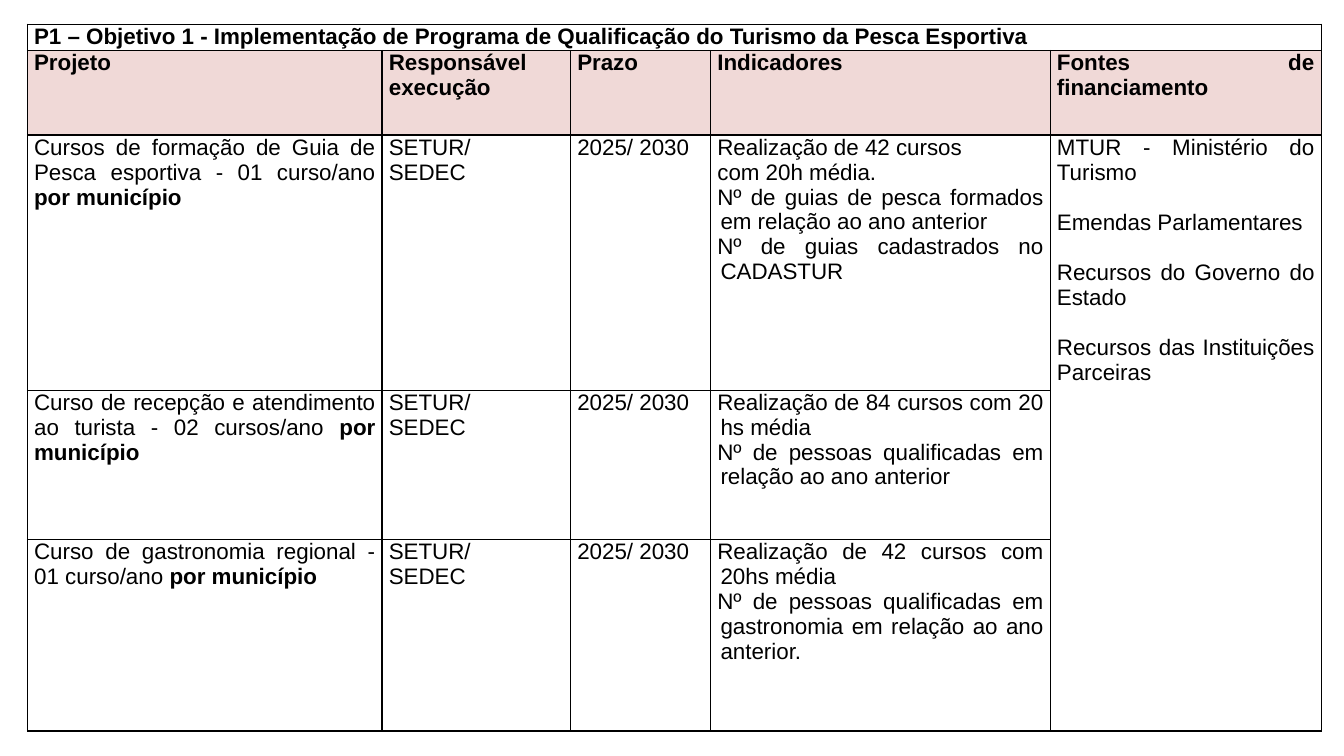
from lxml.etree import SubElement
from pptx import Presentation
from pptx.dml.color import RGBColor
from pptx.enum.text import PP_ALIGN
from pptx.oxml.ns import qn
from pptx.util import Cm, Pt

BLACK = "000000"
HEADER_FILL = "F0D9D7"
COLUMN_SHARES = (3.52, 1.87, 1.39, 3.37, 2.69)
ROW_SHARES = (0.26, 0.84, 2.53, 1.48, 1.9)
INDICATORS_COLUMN = 3
FUNDING_COLUMN = 4

OBJECTIVE = "P1 – Objetivo 1 - Implementação de Programa de Qualificação do Turismo da Pesca Esportiva"
HEADINGS = ("Projeto", "Responsável execução", "Prazo", "Indicadores", "Fontes de financiamento")
RESPONSIBLE = ("SETUR/", "SEDEC")
DEADLINE = "2025/ 2030"
SCOPE = "por município"
PROJECTS = (
    ("Cursos de formação de Guia de Pesca esportiva - 01 curso/ano ",
     ("Realização de 42 cursos",
      "com 20h média.",
      "Nº de guias de pesca formados em relação ao ano anterior",
      "Nº de guias cadastrados no CADASTUR")),
    ("Curso de recepção e atendimento ao turista - 02 cursos/ano ",
     ("Realização de 84 cursos com 20 hs média",
      "Nº de pessoas qualificadas em relação ao ano anterior")),
    ("Curso de gastronomia regional - 01 curso/ano ",
     ("Realização de 42 cursos com 20hs média",
      "Nº de pessoas qualificadas em gastronomia em relação ao ano anterior.")),
)
FUNDING = (
    "MTUR - Ministério do Turismo",
    "Emendas Parlamentares",
    "Recursos do Governo do Estado",
    "Recursos das Instituições Parceiras",
)


def color(value):
    return RGBColor.from_string(value)


def style_run(run, bold):
    run.font.name = "Arial"
    run.font.size = Pt(16)
    run.font.bold = bold
    run.font.color.rgb = color(BLACK)


def format_cell(cell, fill=None):
    cell.margin_left = cell.margin_right = Cm(0.17)
    cell.margin_top = cell.margin_bottom = 0
    properties = cell._tc.get_or_add_tcPr()
    for side in ("a:lnL", "a:lnR", "a:lnT", "a:lnB"):
        border = SubElement(properties, qn(side), w=str(Pt(1)))
        solid = SubElement(border, qn("a:solidFill"))
        SubElement(solid, qn("a:srgbClr"), val=BLACK)
    if fill:
        cell.fill.solid()
        cell.fill.fore_color.rgb = color(fill)
    else:
        cell.fill.background()


def write(cell, lines, bold=False, gap=0, hanging=False):
    cell.text_frame.text = "\n".join(lines)
    for position, paragraph in enumerate(cell.text_frame.paragraphs):
        paragraph.alignment = PP_ALIGN.JUSTIFY
        if position and gap:
            paragraph.space_before = Pt(gap)
        if hanging:
            indent = paragraph._p.get_or_add_pPr()
            indent.set("marL", str(Cm(0.08)))
            indent.set("indent", str(-Cm(0.08)))
        for run in paragraph.runs:
            style_run(run, bold)


def add_plan(slide, left, top, width, height):
    plan = slide.shapes.add_table(
        len(ROW_SHARES), len(COLUMN_SHARES), left, top, width, height).table
    plan.first_row = plan.horz_banding = False
    for column, share in zip(plan.columns, COLUMN_SHARES):
        column.width = round(width * share / sum(COLUMN_SHARES))
    for row, share in zip(plan.rows, ROW_SHARES):
        row.height = round(height * share / sum(ROW_SHARES))
    for index, row in enumerate(plan.rows):
        for cell in row.cells:
            format_cell(cell, HEADER_FILL if index == 1 else None)

    plan.cell(0, 0).merge(plan.cell(0, FUNDING_COLUMN))
    plan.cell(2, FUNDING_COLUMN).merge(plan.cell(len(ROW_SHARES) - 1, FUNDING_COLUMN))
    write(plan.cell(0, 0), [OBJECTIVE], bold=True)
    for column, heading in enumerate(HEADINGS):
        write(plan.cell(1, column), [heading], bold=True)
    for row, (project, indicators) in enumerate(PROJECTS, start=2):
        write(plan.cell(row, 0), [project])
        scope = plan.cell(row, 0).text_frame.paragraphs[0].add_run()
        scope.text = SCOPE
        style_run(scope, True)
        write(plan.cell(row, 1), RESPONSIBLE)
        write(plan.cell(row, 2), [DEADLINE])
        write(plan.cell(row, INDICATORS_COLUMN), indicators, hanging=True)
    write(plan.cell(2, FUNDING_COLUMN), FUNDING, gap=18)


def main():
    presentation = Presentation()
    presentation.slide_width = Cm(33.87)
    presentation.slide_height = Cm(19.05)
    slide = presentation.slides.add_slide(presentation.slide_layouts[6])
    add_plan(slide, Cm(0.69), Cm(0.61), Cm(32.61), Cm(17.81))
    presentation.save("out.pptx")


if __name__ == "__main__":
    main()
